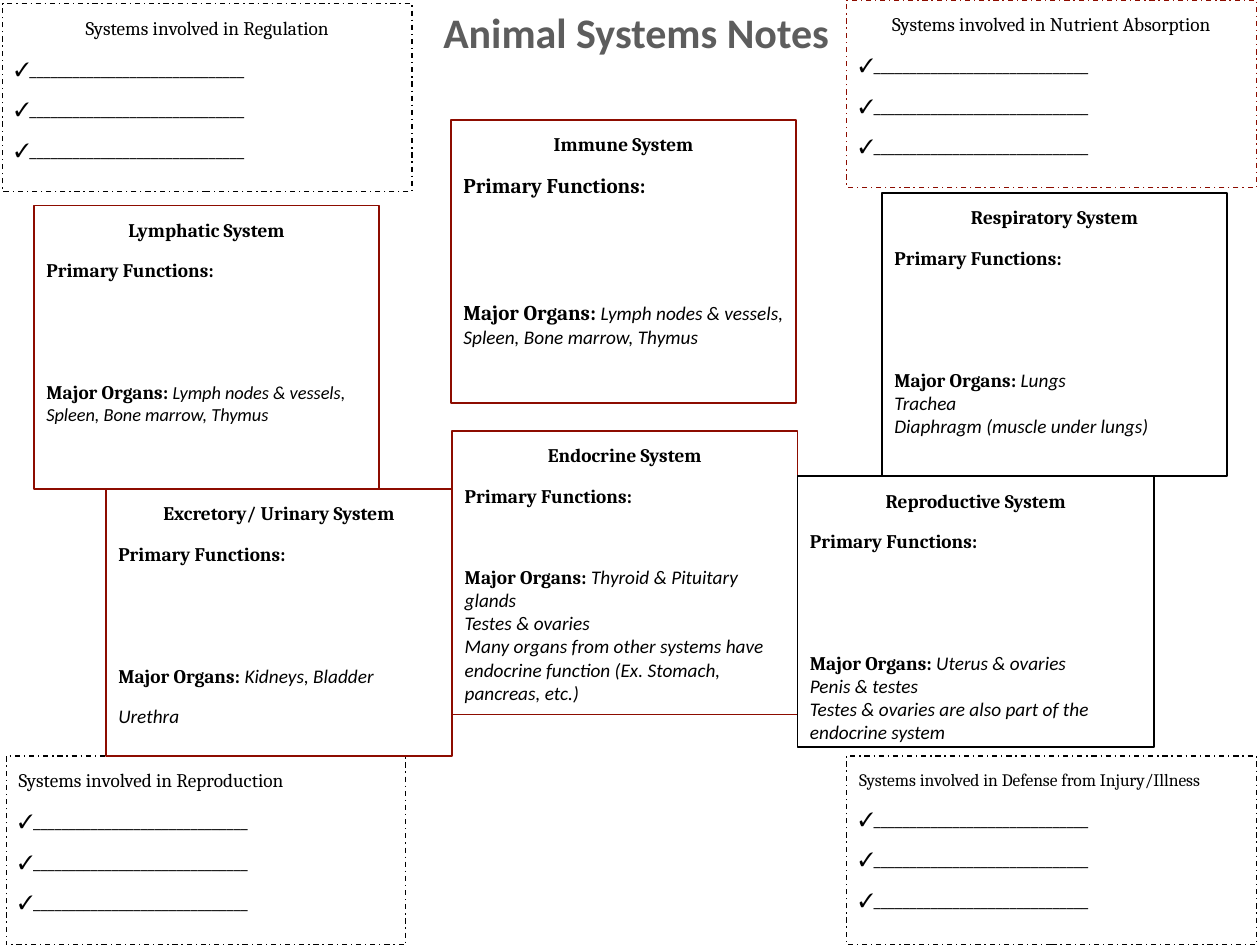
import pptx
import pptx.util
import pptx.dml.color
import pptx.enum.dml
import pptx.enum.shapes
import pptx.enum.text

Inches, Pt = pptx.util.Inches, pptx.util.Pt
ALIGN = pptx.enum.text.PP_ALIGN
COLORS = {"black": "000000", "red": "8D0C00", "gray": "5D5D5D"}
BLANK = "✓" + "_" * 30


class Sheet:
    """Style and current slide of the notes sheet."""

    def __init__(self, slide):
        self.slide = slide
        self.serif, self.sans = "Cambria", "Calibri"

    def color(self, name):
        return pptx.dml.color.RGBColor.from_string(COLORS[name])

    def style(self, font, size, face, color="black", bold=False, italic=False):
        font.size, font.name = Pt(size), face
        font.bold, font.italic = bold, italic
        font.color.rgb = self.color(color)

    def frame(self, area, color, width, dash=None):
        kind = pptx.enum.shapes.MSO_SHAPE.RECTANGLE
        shape = self.slide.shapes.add_shape(kind, *map(Inches, area))
        shape.shadow.inherit = False
        shape.fill.background()
        shape.line.color.rgb = self.color(color)
        shape.line.width = Pt(width)
        if dash:
            shape.line.dash_style = dash
        text = shape.text_frame
        text.word_wrap = True
        text.vertical_anchor = pptx.enum.text.MSO_ANCHOR.TOP
        text.margin_left = text.margin_right = Inches(0.1)
        text.margin_top = text.margin_bottom = Inches(0.1)
        return text

    def para(self, text, first=False, after=10, align=ALIGN.LEFT):
        para = text.paragraphs[0] if first else text.add_paragraph()
        para.alignment, para.space_after = align, Pt(after)
        return para

    def line(self, text, words, size=11, face=None, bold=False, italic=False, **place):
        para = self.para(text, **place)
        para.text = words
        self.style(para.font, size, face or self.serif, bold=bold, italic=italic)

    def list(self, area, topic, color="black", size=11, align=ALIGN.LEFT):
        text = self.frame(area, color, 0.75, pptx.enum.dml.MSO_LINE.DASH_DOT)
        self.line(text, "Systems involved in " + topic, size, first=True, align=align)
        for _ in range(3):
            self.line(text, BLANK)

    def card(self, area, name, organs, color="red", gap=56.4, head=11, body=11, after=0):
        text = self.frame(area, color, 1)
        self.line(text, name + " System", bold=True, first=True, align=ALIGN.CENTER)
        self.line(text, "Primary Functions:", head, bold=True, after=gap)
        para = self.para(text, after=after)
        label, value = para.add_run(), para.add_run()
        label.text, value.text = "Major Organs: ", organs[0]
        self.style(label.font, head, self.serif, bold=True)
        self.style(value.font, body, self.sans, italic=True)
        for organ in organs[1:]:
            self.line(text, organ, body, self.sans, italic=True, after=0)

    def title(self, area, words):
        text = self.slide.shapes.add_textbox(*map(Inches, area)).text_frame
        text.word_wrap = True
        para = self.para(text, first=True, after=0, align=ALIGN.CENTER)
        para.text = words
        self.style(para.font, 24, self.sans, "gray", bold=True)


def main():
    deck = pptx.Presentation()
    deck.slide_width, deck.slide_height = Inches(10), Inches(7.5)
    sheet = Sheet(deck.slides.add_slide(deck.slide_layouts[6]))

    sheet.list((0.02, 0.03, 3.25, 1.49), "Regulation", align=ALIGN.CENTER)
    sheet.list((0.05, 6, 3.17, 1.5), "Reproduction")
    sheet.list((6.72, 6, 3.25, 1.5), "Defense from Injury/Illness", size=10)
    sheet.list((6.72, 0, 3.25, 1.49), "Nutrient Absorption", "red", align=ALIGN.CENTER)

    lymph = ["Lymph nodes & vessels, Spleen, Bone marrow, Thymus"]
    sheet.card((0.27, 1.63, 2.74, 2.25), "Lymphatic", lymph, body=10.5)
    sheet.card((0.84, 3.88, 2.75, 2.12), "Excretory/ Urinary",
               ["Kidneys, Bladder", "Urethra"], after=10)
    sheet.card((3.58, 0.95, 2.74, 2.25), "Immune", lymph, gap=58.2, head=12)
    sheet.card((3.59, 3.42, 2.74, 2.25), "Endocrine",
               ["Thyroid & Pituitary glands", "Testes & ovaries",
                "Many organs from other systems have endocrine function "
                "(Ex. Stomach, pancreas, etc.)"], gap=33.2)
    sheet.card((6.33, 3.78, 2.83, 2.15), "Reproductive",
               ["Uterus & ovaries", "Penis & testes",
                "Testes & ovaries are also part of the endocrine system"], "black")
    sheet.card((7, 1.53, 2.74, 2.25), "Respiratory",
               ["Lungs", "Trachea", "Diaphragm (muscle under lungs)"], "black")

    sheet.title((3.35, 0, 3.4, 0.5), "Animal Systems Notes")
    deck.save("out.pptx")


if __name__ == "__main__":
    main()
